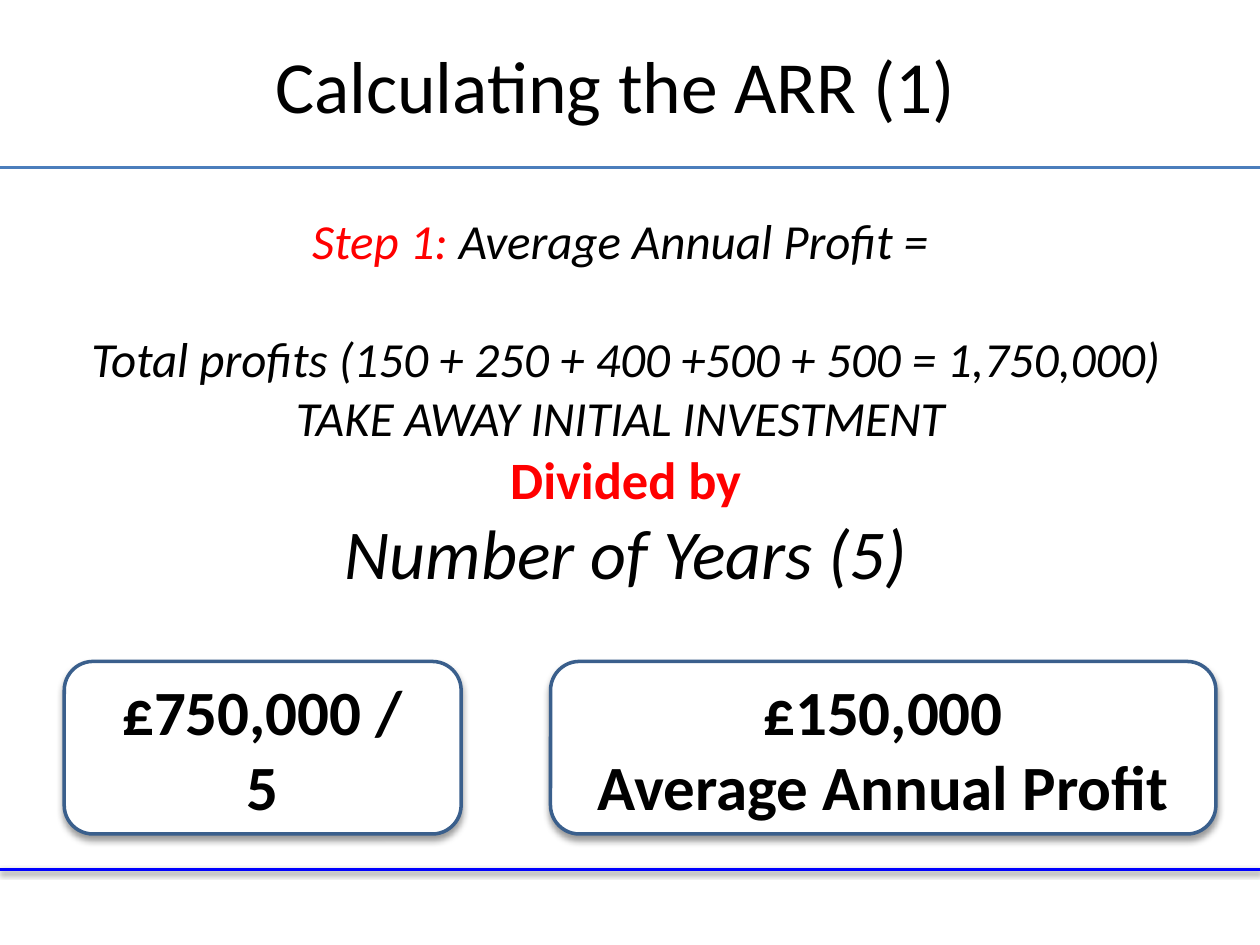
from lxml import etree
from pptx import Presentation
from pptx.dml.color import RGBColor
from pptx.enum.shapes import MSO_CONNECTOR, MSO_SHAPE
from pptx.enum.text import MSO_ANCHOR, MSO_AUTO_SIZE, PP_ALIGN
from pptx.oxml.ns import qn
from pptx.util import Pt

STRAIGHT = MSO_CONNECTOR.STRAIGHT
ROUNDED = MSO_SHAPE.ROUNDED_RECTANGLE
MIDDLE = MSO_ANCHOR.MIDDLE
GROW = MSO_AUTO_SIZE.SHAPE_TO_FIT_TEXT
CENTER = PP_ALIGN.CENTER

FONT = "Calibri"
BLACK, WHITE, RED = "000000", "FFFFFF", "FF0000"
WIDTH, HEIGHT = 720, 540
BLANK_LINE = 34.2  # one line of 28 pt text


def rgb(value):
    return RGBColor.from_string(value)


def write(p, text, size=28, color=BLACK, bold=False, italic=False):
    p.alignment = CENTER
    r = p.add_run()
    r.text = text
    r.font.name = FONT
    r.font.size = Pt(size)
    r.font.color.rgb = rgb(color)
    r.font.bold = bold
    r.font.italic = italic


def next_paragraph(tf, index):
    return tf.add_paragraph() if index else tf.paragraphs[0]


def set_effects(sp, shadow=None):
    """Replace theme effects by none, or by a downward (opacity %, blur, distance) shadow."""
    sp_pr = sp._element.spPr
    effects = etree.SubElement(sp_pr, qn("a:effectLst"))
    if shadow:
        opacity, blur, distance = shadow
        outer = etree.SubElement(
            effects, qn("a:outerShdw"), blurRad=str(Pt(blur)),
            dist=str(Pt(distance)), dir="5400000", rotWithShape="0")
        color = etree.SubElement(outer, qn("a:srgbClr"), val=BLACK)
        etree.SubElement(color, qn("a:alpha"), val=str(opacity * 1000))


def add_rule(s, y, color, weight, shadow=None):
    line = s.shapes.add_connector(STRAIGHT, Pt(0), Pt(y), Pt(WIDTH), Pt(y))
    line.line.color.rgb = rgb(color)
    line.line.width = Pt(weight)
    set_effects(line, shadow)


def place_title(s, text, x, y, w, h):
    title = s.shapes.title
    title.left, title.top, title.width, title.height = map(Pt, (x, y, w, h))
    tf = title.text_frame
    tf.vertical_anchor = MIDDLE
    write(tf.paragraphs[0], text, size=42)


def add_formula(s, x, y, w, h):
    tf = s.shapes.add_textbox(Pt(x), Pt(y), Pt(w), Pt(h)).text_frame
    tf.word_wrap = True
    tf.auto_size = GROW
    italic = {"italic": True}
    lines = [
        [("Step 1: ", {"color": RED, **italic}),
         ("Average Annual Profit = ", italic)],
        [("Total profits (150 + 250 + 400 +500 + 500 = 1,750,000)", italic)],
        [("TAKE AWAY INITIAL INVESTMENT ", italic)],
        [("Divided by", {"size": 30, "color": RED, "bold": True})],
        [("Number of Years (5)", {"size": 40, **italic})],
    ]
    for i, runs in enumerate(lines):
        p = next_paragraph(tf, i)
        for text, fmt in runs:
            write(p, text, **fmt)
    tf.paragraphs[1].space_before = Pt(BLANK_LINE)


def add_result(s, lines, x, y, w, h):
    sp = s.shapes.add_shape(ROUNDED, Pt(x), Pt(y), Pt(w), Pt(h))
    sp.fill.solid()
    sp.fill.fore_color.rgb = rgb(WHITE)
    sp.line.color.rgb = rgb("3A5F8C")
    sp.line.width = Pt(2)
    set_effects(sp, shadow=(40, 4, 3))
    tf = sp.text_frame
    tf.word_wrap = True
    tf.vertical_anchor = MIDDLE
    for i, text in enumerate(lines):
        write(next_paragraph(tf, i), text, size=36, bold=True)


def main():
    prs = Presentation()
    prs.slide_width, prs.slide_height = Pt(WIDTH), Pt(HEIGHT)
    s = prs.slides.add_slide(prs.slide_layouts[5])
    add_rule(s, 496.8, "0000FF", 2, shadow=(38, 3.1, 1.6))
    add_rule(s, 95.6, "4B7EBC", 1.75)
    place_title(s, "Calculating the ARR (1)", 8.6, 5.8, 686, 84)
    add_formula(s, 8.6, 116.6, 698, 227.5)
    results = [
        (["£750,000 /", "5"], 36.7, 226.8),
        (["£150,000", "Average Annual Profit"], 314.6, 380.2),
    ]
    for lines, x, w in results:
        add_result(s, lines, x, 378, w, 98.6)
    prs.save("out.pptx")


if __name__ == "__main__":
    main()
